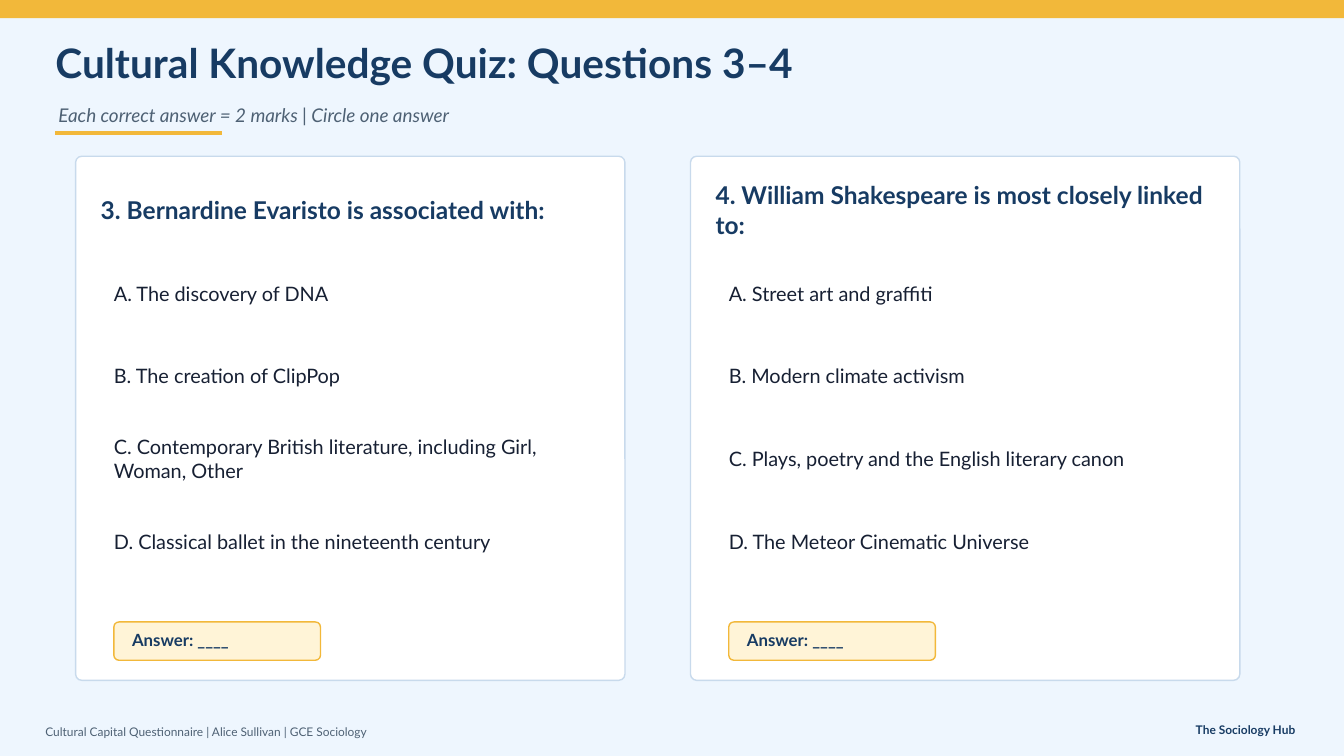
from pptx import Presentation
from pptx.dml.color import RGBColor
from pptx.enum.shapes import MSO_CONNECTOR, MSO_SHAPE
from pptx.enum.text import MSO_ANCHOR, PP_ALIGN
from pptx.oxml.ns import qn
from pptx.util import Inches, Pt
from lxml import etree

RECT, ROUND = MSO_SHAPE.RECTANGLE, MSO_SHAPE.ROUNDED_RECTANGLE
STRAIGHT = MSO_CONNECTOR.STRAIGHT
MIDDLE = MSO_ANCHOR.MIDDLE
LEFT, RIGHT = PP_ALIGN.LEFT, PP_ALIGN.RIGHT

COLORS = {"sky": "EEF6FE", "gold": "F2B83A", "navy": "173B63", "slate": "4E6174",
          "ink": "172033", "white": "FFFFFF", "border": "C8DAEC", "cream": "FFF4D7"}
FORMATS = {
    "title": {"size": Pt(29), "bold": True, "color": "navy"},
    "subtitle": {"size": Pt(13.5), "italic": True, "color": "slate"},
    "question": {"size": Pt(17.5), "bold": True, "color": "navy"},
    "option": {"size": Pt(14.2), "color": "ink"},
    "answer": {"size": Pt(12), "bold": True, "color": "navy"},
    "footer": {"size": Pt(8.5), "color": "slate"},
    "author": {"size": Pt(8.5), "bold": True, "color": "navy"},
}
WIDTH, HEIGHT = Inches(13.33), Inches(7.5)
COLS, ROWS = 40, 30

QUESTIONS = [
    ("3. Bernardine Evaristo is associated with:",
     ["A. The discovery of DNA",
      "B. The creation of ClipPop",
      "C. Contemporary British literature, including Girl, Woman, Other",
      "D. Classical ballet in the nineteenth century"]),
    ("4. William Shakespeare is most closely linked to:",
     ["A. Street art and graffiti",
      "B. Modern climate activism",
      "C. Plays, poetry and the English literary canon",
      "D. The Meteor Cinematic Universe"]),
]


class QuizSlide:
    """Places styled elements on a slide; lengths are grid columns and rows."""

    def __init__(self, prs):
        self.font = "Lato"
        self.s = prs.slides.add_slide(prs.slide_layouts[6])
        fill = self.s.background.fill
        fill.solid()
        fill.fore_color.rgb = self.color("sky")

    def color(self, name):
        return RGBColor.from_string(COLORS[name])

    def grid(self, x, y):
        return round(x * WIDTH / COLS), round(y * HEIGHT / ROWS)

    def box(self, kind, x, y, w, h, fill, line=None, radius=None):
        sp = self.s.shapes.add_shape(kind, *self.grid(x, y), *self.grid(w, h))
        sp.shadow.inherit = False
        sp.fill.solid()
        sp.fill.fore_color.rgb = self.color(fill)
        if radius is not None:
            sp.adjustments[0] = radius
        if line:
            sp.line.color.rgb = self.color(line)
            sp.line.width = Pt(1)
        else:
            sp.line.fill.background()

    def text(self, x, y, w, h, text, style, align=LEFT):
        sp = self.s.shapes.add_textbox(*self.grid(x, y), *self.grid(w, h))
        tf = sp.text_frame
        frame = {"word_wrap": True, "vertical_anchor": MIDDLE, "margin_left": 0,
                 "margin_right": 0, "margin_top": 0, "margin_bottom": 0}
        for name, value in frame.items():
            setattr(tf, name, value)
        p = tf.paragraphs[0]
        p.alignment = align
        r = p.add_run()
        r.text = text
        r.font.name = self.font
        for name, value in FORMATS[style].items():
            if name == "color":
                r.font.color.rgb = self.color(value)
            else:
                setattr(r.font, name, value)

    def rule(self, x1, x2, y, color, width):
        line = self.s.shapes.add_connector(STRAIGHT, *self.grid(x1, y), *self.grid(x2, y))
        line.line.color.rgb = self.color(color)
        line.line.width = Pt(width)
        etree.SubElement(line._element.spPr, qn("a:effectLst"))

    def card(self, x, question, options):
        self.box(ROUND, x, 6.2, 16.35, 20.8, "white", "border", 0.012)
        self.text(x + 0.75, 7.08, 14.85, 2.48, question, "question")
        inner = x + 1.14
        for i, option in enumerate(options):
            self.text(inner, 10.4 + 3.28 * i, 14.19, 2.48, option, "option")
        self.box(ROUND, inner, 24.68, 6.15, 1.52, "cream", "gold", 0.132)
        self.text(inner + 0.54, 25.12, 4.8, 0.56, "Answer: ____", "answer")


def main():
    prs = Presentation()
    prs.slide_width, prs.slide_height = WIDTH, HEIGHT
    quiz = QuizSlide(prs)

    # Header
    quiz.box(RECT, 0, 0, COLS, 0.72, "gold")
    quiz.text(1.65, 1.4, 28.8, 2.16, "Cultural Knowledge Quiz: Questions 3–4", "title")
    quiz.text(1.74, 3.84, 26.7, 1.44,
              "Each correct answer = 2 marks | Circle one answer", "subtitle")
    quiz.rule(1.65, 6.6, 5.28, "gold", 3)

    # Question cards
    for i, (question, options) in enumerate(QUESTIONS):
        quiz.card(2.25 + 18.3 * i, question, options)

    # Footer
    quiz.text(1.35, 28.64, 31.5, 0.8,
              "Cultural Capital Questionnaire | Alice Sullivan | GCE Sociology", "footer")
    quiz.text(33.45, 28.56, 5.1, 0.8, "The Sociology Hub", "author", RIGHT)

    prs.save("out.pptx")


if __name__ == "__main__":
    main()
